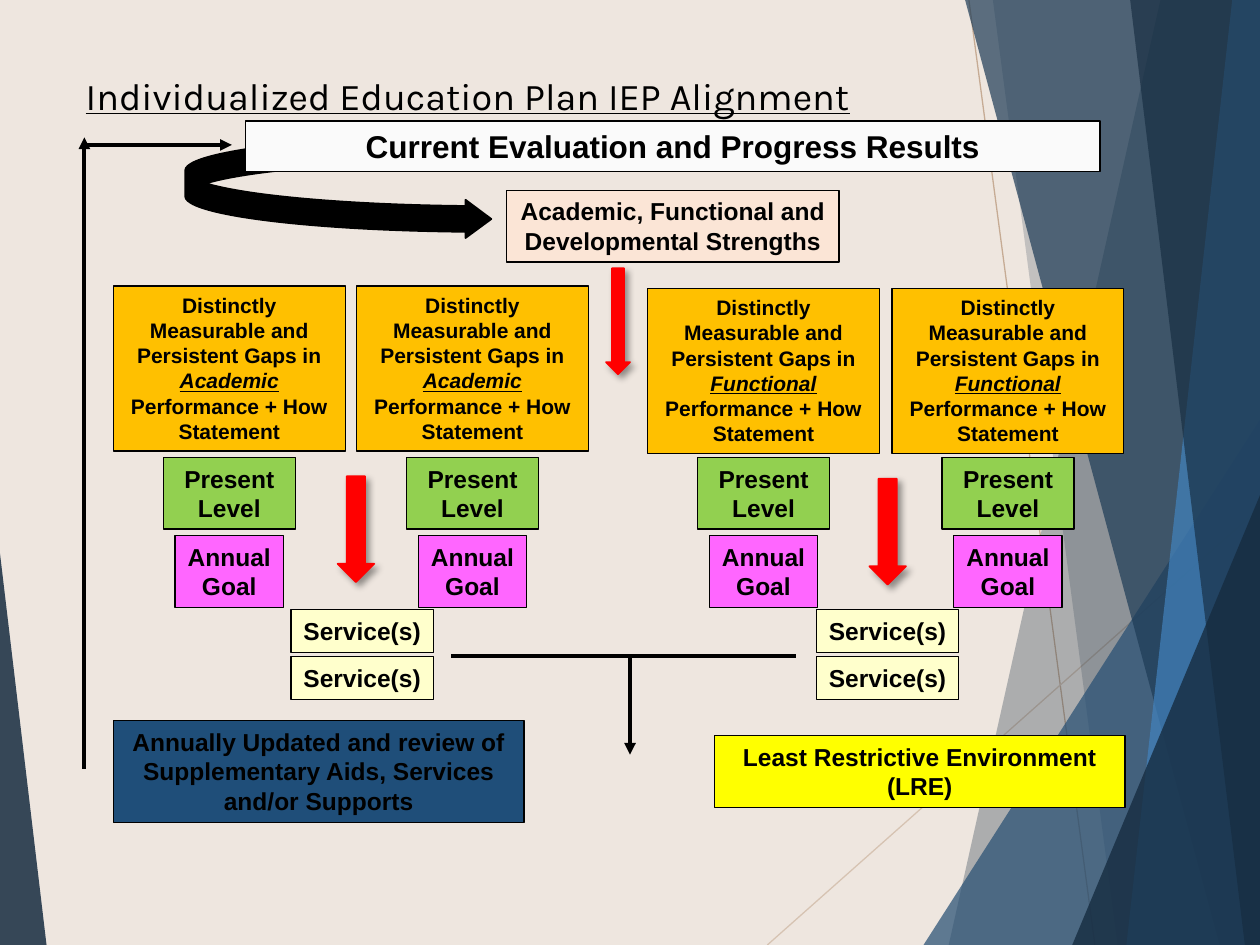
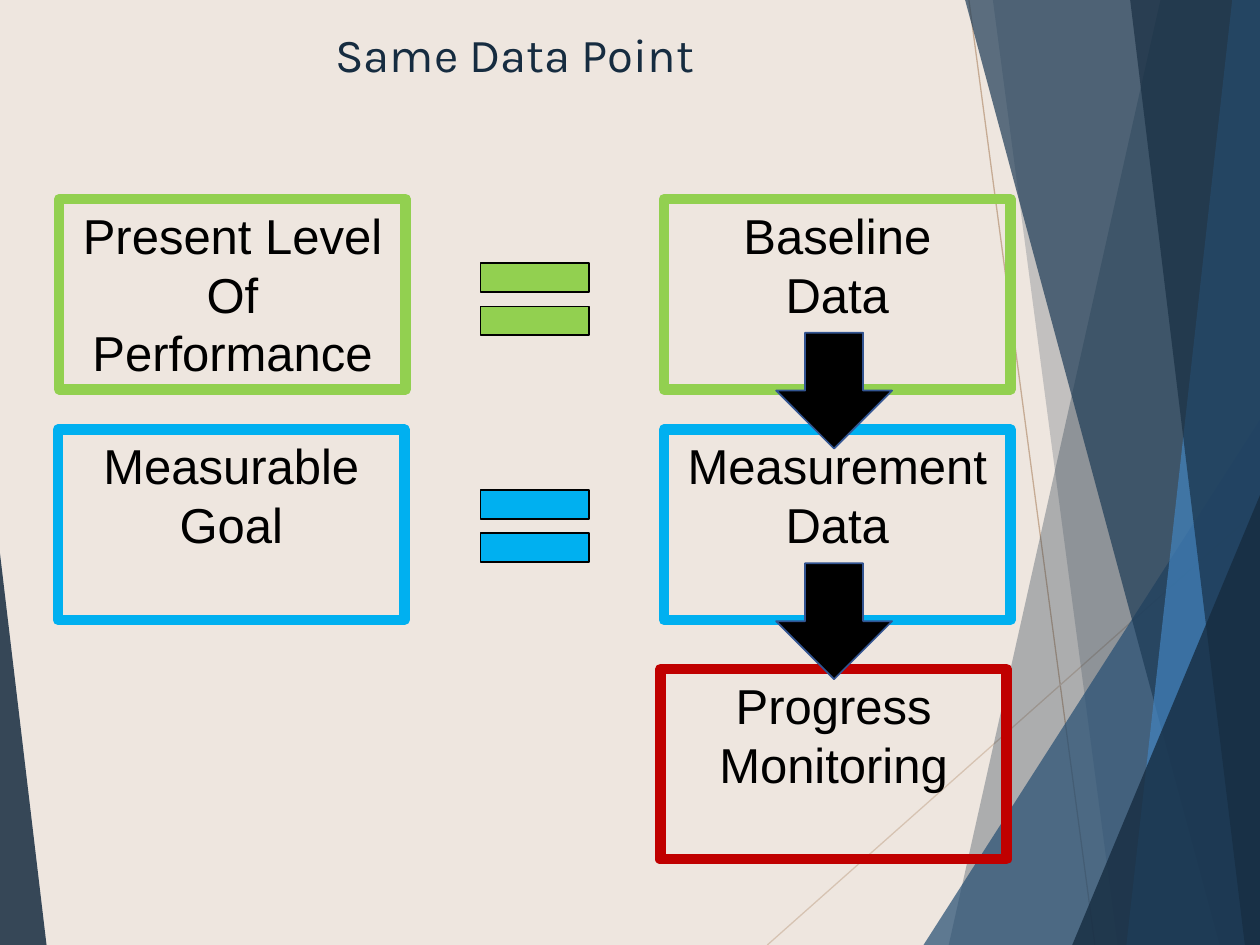
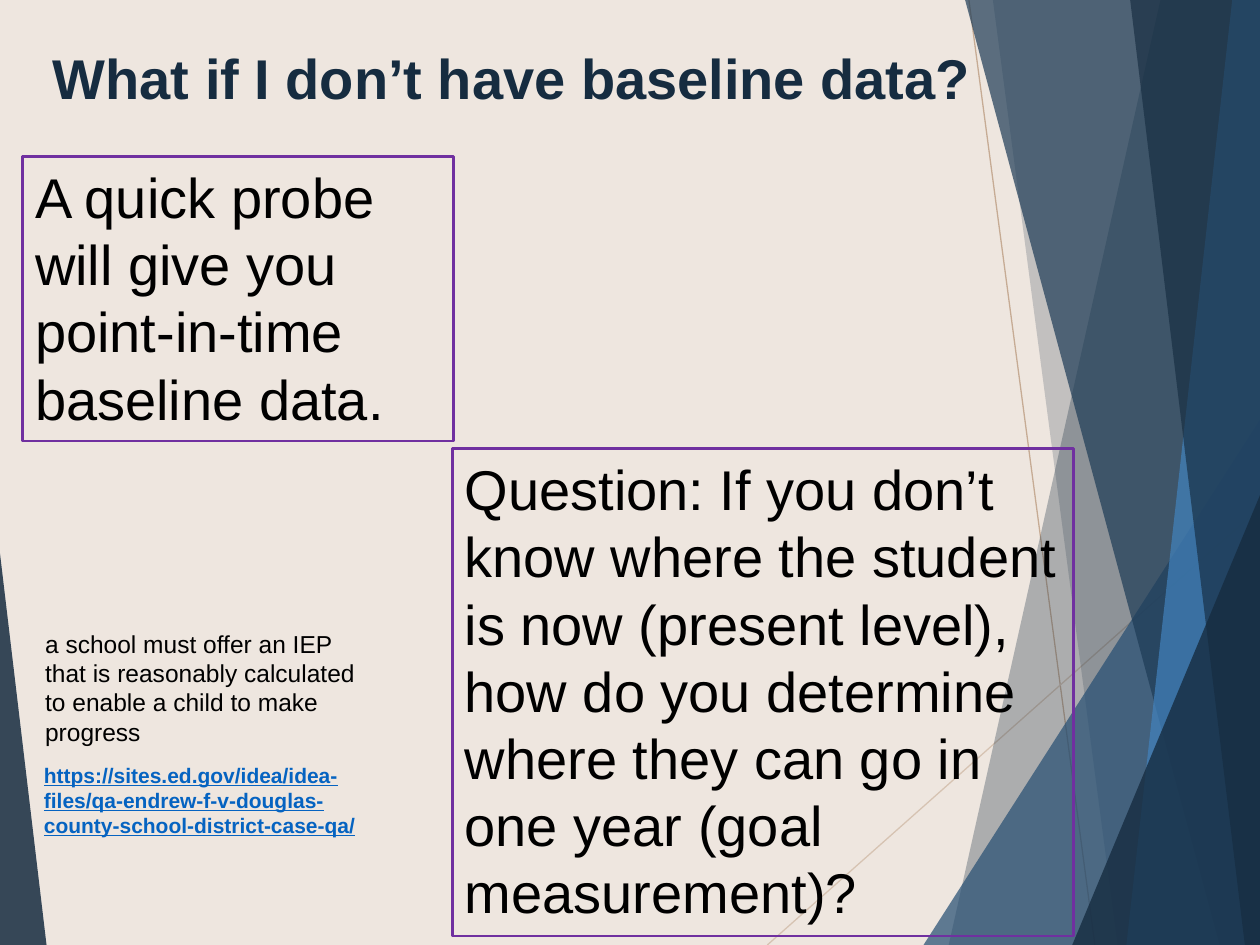
from dataclasses import dataclass
from typing import NamedTuple

from lxml.etree import SubElement
from pptx import Presentation
from pptx.dml.color import RGBColor
from pptx.enum.shapes import MSO_CONNECTOR as Link, MSO_SHAPE as Form
from pptx.enum.text import MSO_ANCHOR as Anchor, MSO_AUTO_SIZE as Auto, PP_ALIGN as Align
from pptx.oxml.ns import qn
from pptx.util import Inches, Pt

WIDE, HIGH = Inches(10), Inches(7.5)
COL, ROW = WIDE / 100, HIGH / 75

HUES = {
    "sand": "EEE6DF", "tan": "C6AB94", "dune": "D6C3B2",
    "ink": "162C40", "steel": "274F73", "navy": "1D3B56", "sky": "4283BE",
    "black": "000000", "white": "FAFAFA", "peach": "FBE5D6", "gold": "FFC000",
    "pink": "FF66FF", "green": "92D050", "cream": "FFFFCC", "deep": "1F4E79",
    "lemon": "FFFF00", "red": "FF0000", "aqua": "00B0F0", "brick": "C00000",
    "edge": "325491", "plum": "7030A0", "link": "0563C1",
}


class Area(NamedTuple):
    left: float
    top: float
    wide: float
    high: float


class Facet(NamedTuple):
    hue: str
    alpha: int
    points: tuple


class Stroke(NamedTuple):
    start: tuple
    end: tuple
    hue: str = "black"
    width: float = 2.25
    arrow: bool = False


@dataclass
class Type:
    size: float
    bold: bool = False
    hue: str = "black"
    face: str = "Arial"
    under: bool = False
    align: Align = Align.CENTER


@dataclass
class Box:
    area: Area
    text: str = ""
    style: Type | None = None
    fill: str = ""
    line: str = ""
    width: float = 0.75
    form: Form = Form.RECTANGLE
    key: str = ""
    shade: bool = False
    bends: tuple = ()


BANDS = [
    Stroke((76.9, 0), (86.9, 75), "tan", 0.75),
    Stroke((100, 40.3), (60.9, 75), "dune", 0.75),
]
FACETS = [
    Facet("ink", 30, ((92.1, 0), (100, 0), (100, 75), (75.3, 75))),
    Facet("ink", 20, ((78.8, 0), (100, 0), (100, 75), (88.7, 75))),
    Facet("steel", 72, ((73.3, 75), (100, 33.3), (100, 75))),
    Facet("navy", 70, ((76.6, 0), (100, 0), (100, 75), (96.8, 75))),
    Facet("sky", 70, ((97.8, 0), (100, 0), (100, 75), (89.4, 75))),
    Facet("ink", 65, ((89.7, 0), (100, 0), (100, 75), (98.8, 75))),
    Facet("ink", 80, ((85.1, 75), (100, 39.3), (100, 75))),
    Facet("ink", 85, ((0, 75), (0, 43.9), (3.7, 75))),
]

SMALL = Type(12, bold=True)
LABEL = Type(14, bold=True)
HEAD = Type(18, bold=True)
LARGE = Type(28)
PROSE = Type(32, align=Align.LEFT)
NOTE = Type(14, align=Align.LEFT)
CITE = Type(12, bold=True, hue="link", under=True, align=Align.LEFT)


def tint(name: str) -> RGBColor:
    return RGBColor.from_string(HUES[name])


def place(shape, area: Area) -> None:
    shape.left, shape.top = round(area.left * COL), round(area.top * ROW)
    shape.width, shape.height = round(area.wide * COL), round(area.high * ROW)


def write(shape, text: str, style: Type, key: str = "") -> None:
    frame = shape.text_frame
    frame.text = text
    frame.word_wrap = True
    frame.auto_size = Auto.NONE
    if key:
        para = frame.paragraphs[0]
        before, word, after = text.partition(key)
        para.text = before
        for part in (word, after):
            para.add_run().text = part
    for para in frame.paragraphs:
        para.alignment = style.align
        for run in para.runs:
            font = run.font
            font.name, font.size, font.bold = style.face, Pt(style.size), style.bold
            font.color.rgb = tint(style.hue)
            font.underline = style.under or run.text == key
            font.italic = run.text == key


def cast(shape) -> None:
    effects = shape.element.spPr.find(qn("a:effectLst"))
    outer = SubElement(effects, qn("a:outerShdw"), blurRad=str(Pt(4)),
                       dist=str(Pt(3)), dir=str(45 * 60000), rotWithShape="0")
    color = SubElement(outer, qn("a:srgbClr"), val=HUES["black"])
    SubElement(color, qn("a:alpha"), val="40000")


def draw(slide, box: Box) -> None:
    shape = slide.shapes.add_shape(box.form, 0, 0, 0, 0)
    place(shape, box.area)
    shape.shadow.inherit = False
    for spot, bend in enumerate(box.bends):
        shape.adjustments[spot] = bend
    if box.fill:
        shape.fill.solid()
        shape.fill.fore_color.rgb = tint(box.fill)
    else:
        shape.fill.background()
    shape.line.color.rgb = tint(box.line)
    shape.line.width = Pt(box.width)
    if box.shade:
        cast(shape)
    if box.text:
        shape.text_frame.vertical_anchor = Anchor.TOP
        write(shape, box.text, box.style, box.key)


def label(slide, area: Area, text: str, style: Type) -> None:
    shape = slide.shapes.add_textbox(0, 0, 0, 0)
    place(shape, area)
    write(shape, text, style)


def rule(slide, stroke: Stroke):
    (left, top), (right, base) = stroke.start, stroke.end
    line = slide.shapes.add_connector(Link.STRAIGHT, round(left * COL), round(top * ROW),
                                      round(right * COL), round(base * ROW))
    line.line.color.rgb = tint(stroke.hue)
    line.line.width = Pt(stroke.width)
    props = line.element.spPr
    if stroke.arrow:
        SubElement(props.find(qn("a:ln")), qn("a:tailEnd"), type="triangle")
    SubElement(props, qn("a:effectLst"))
    return line


def carve(slide, facet: Facet):
    first, *rest = [(round(x * COL), round(y * ROW)) for x, y in facet.points]
    pen = slide.shapes.build_freeform(*first)
    pen.add_line_segments(rest, close=True)
    shape = pen.convert_to_shape()
    shape.shadow.inherit = False
    shape.fill.solid()
    shape.fill.fore_color.rgb = tint(facet.hue)
    shape.line.fill.background()
    color = shape.element.spPr.find(qn("a:solidFill")).find(qn("a:srgbClr"))
    SubElement(color, qn("a:alpha"), val=str(facet.alpha * 1000))
    return shape


def dress(deck, slide) -> None:
    master = deck.slide_master
    master.background.fill.solid()
    master.background.fill.fore_color.rgb = tint("sand")
    parts = [rule(slide, band) for band in BANDS] + [carve(slide, facet) for facet in FACETS]
    for count, part in enumerate(parts, 100):
        for props in part.element.iter(qn("p:cNvPr")):
            props.set("id", str(count))
        master.shapes.element.append(part.element)


def start(deck, area: Area, text: str, style: Type, anchor: Anchor = Anchor.TOP):
    slide = deck.slides.add_slide(deck.slide_layouts.get_by_name("Title Only"))
    title = slide.shapes.title
    place(title, area)
    title.text_frame.vertical_anchor = anchor
    if anchor == Anchor.TOP:
        title.text_frame.margin_top = Inches(0.08)
    write(title, text, style)
    return slide


def card(mid: float, top: float, wide: float, high: float, text: str, fill: str,
         style: Type = LABEL, key: str = "") -> Box:
    return Box(Area(mid - wide / 2, top, wide, high), text, style, fill, "black", key=key)


def drop(mid: float, top: float, wide: float) -> Box:
    return Box(Area(mid - wide / 2, top, wide, 8.4), fill="red", line="red", width=1,
               form=Form.DOWN_ARROW, shade=True)


def align(slide) -> None:
    draw(slide, card(53.4, 15.1, 26.4, 5.7,
                     "Academic, Functional and\nDevelopmental Strengths", "peach"))
    tracks = [(18.2, 22.7, "Academic"), (37.5, 22.7, "Academic"),
              (60.6, 22.9, "Functional"), (80, 22.9, "Functional")]
    for mid, top, kind in tracks:
        gap = f"Distinctly Measurable and Persistent Gaps in {kind} Performance + How Statement"
        draw(slide, card(mid, top, 18.4, 13.1, gap, "gold", SMALL, kind))
        draw(slide, card(mid, 36.3, 10.5, 5.7, "Present Level", "green"))
        draw(slide, card(mid, 42.5, 8.6, 5.7, "Annual Goal", "pink"))
    for mid, shaft, top in ((28.75, 28.25, 37.8), (70.45, 70.45, 38)):
        for tier in (48.4, 52.1):
            draw(slide, card(mid, tier, 11.3, 3.4, "Service(s)", "cream"))
        draw(slide, drop(shaft, top, 2.9))
    draw(slide, card(25.3, 57.2, 32.6, 8.1,
                     "Annually Updated and review of Supplementary Aids, Services and/or Supports",
                     "deep"))
    draw(slide, card(73, 58.4, 32.6, 5.7, "Least Restrictive Environment\n(LRE)", "lemon"))
    for stroke in (Stroke((6.7, 61), (6.7, 10.9), arrow=True),
                   Stroke((6.7, 11.5), (18.4, 11.5), arrow=True),
                   Stroke((35.8, 52.1), (63.2, 52.1)),
                   Stroke((50, 52.1), (50, 59.9), arrow=True)):
        rule(slide, stroke)
    draw(slide, Box(Area(14.7, 10.7, 24.3, 8.2), fill="black", line="black", width=1,
                    form=Form.CURVED_RIGHT_ARROW, bends=(0.25, 0.37, 0.25)))
    draw(slide, card(53.4, 9.6, 67.8, 4, "Current Evaluation and Progress Results", "white", HEAD))
    draw(slide, drop(49.05, 21.3, 1.9))


def match(slide) -> None:
    frames = [
        (4.7, 15.8, "Present Level\nOf\nPerformance", "green"),
        (52.7, 15.8, "Baseline\nData", "green"),
        (4.6, 34.1, "Measurable\nGoal", "aqua"),
        (52.7, 34.1, "Measurement\nData", "aqua"),
        (52.4, 53.1, "Progress Monitoring", "brick"),
    ]
    for left, top, text, hue in frames:
        draw(slide, Box(Area(left, top, 27.5, 15.1), text, LARGE, line=hue, width=6))
    for top, hue in ((18.9, "green"), (36.9, "aqua")):
        draw(slide, Box(Area(36.6, top, 11.7, 9.7), fill=hue, line="black", width=1,
                        form=Form.MATH_EQUAL))
    for top in (26.4, 44.7):
        draw(slide, Box(Area(61.6, top, 9.2, 9.2), fill="black", line="edge", width=1,
                        form=Form.DOWN_ARROW))


def probe(slide) -> None:
    draw(slide, Box(Area(1.8, 12.4, 34.2, 22.6),
                    "A quick probe will give you point-in-time baseline data.",
                    PROSE, line="plum", width=1.5))
    draw(slide, Box(Area(35.9, 35.6, 49.3, 38.7),
                    "Question: If you don’t know where the student is now (present level), "
                    "how do you determine where they can go in one year (goal measurement)?",
                    PROSE, line="plum", width=1.5))
    label(slide, Area(2.5, 60, 29.2, 9.1),
          "https://sites.ed.gov/idea/idea-files/qa-endrew-f-v-douglas-county-school-district-case-qa/",
          CITE)
    label(slide, Area(2.6, 49.4, 28.3, 10.4),
          "a school must offer an IEP that is reasonably calculated to enable a child "
          "to make progress", NOTE)


def main() -> None:
    deck = Presentation()
    deck.slide_width, deck.slide_height = WIDE, HIGH
    first = start(deck, Area(5.8, 5, 89.2, 4), "Individualized Education Plan IEP Alignment",
                  Type(21.6, face="Karla", under=True, align=Align.LEFT))
    dress(deck, first)
    align(first)
    match(start(deck, Area(5.6, 1.2, 70.5, 9.7), "Same Data Point",
                Type(27, hue="ink", face="Karla")))
    probe(start(deck, Area(1.7, 2.5, 77.9, 6.8), "What if I don’t have baseline data?",
                Type(32, bold=True, hue="ink"), Anchor.BOTTOM))
    deck.save("out.pptx")


if __name__ == "__main__":
    main()
